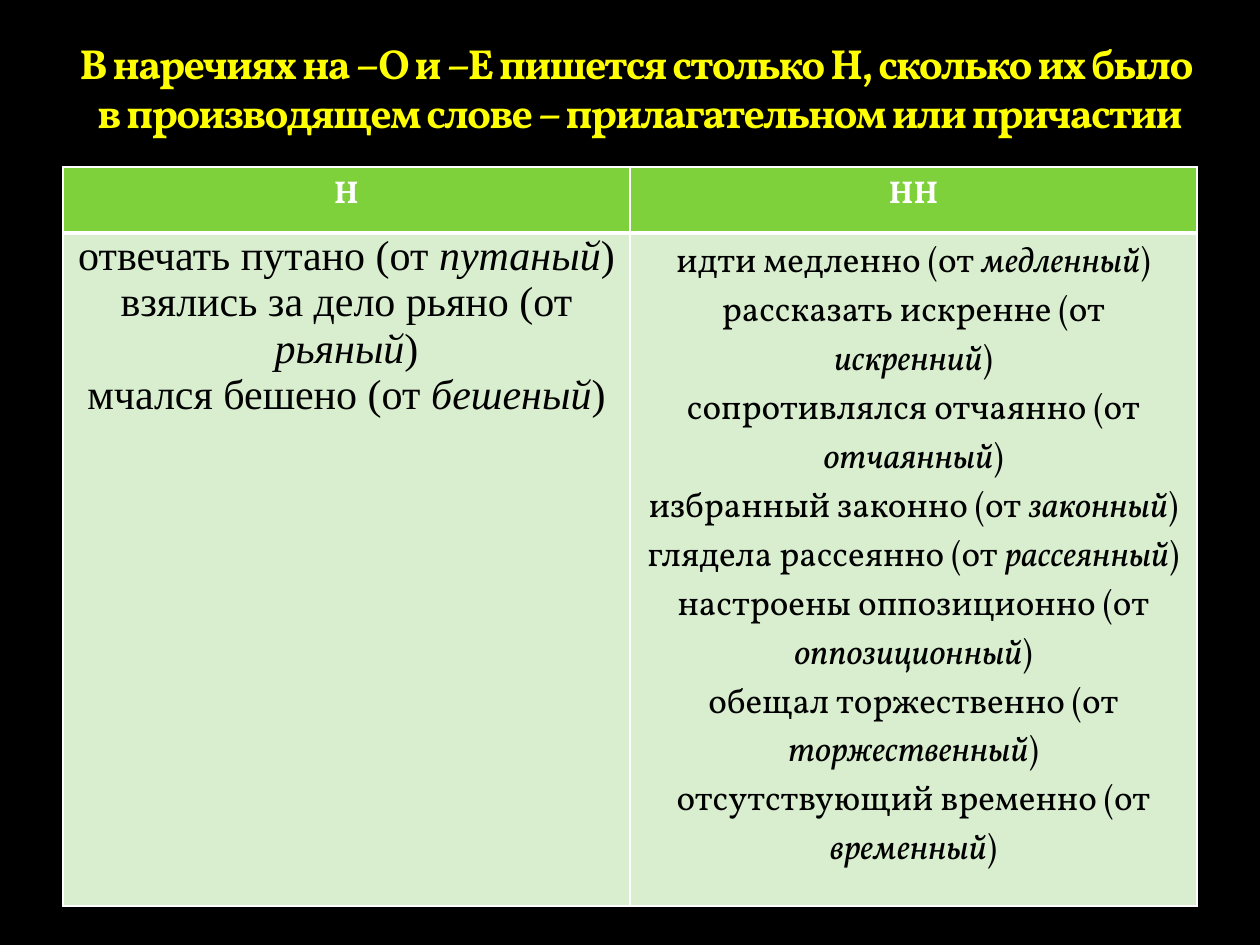
from lxml import etree
from pptx import Presentation
from pptx.dml import color
from pptx.enum import text
from pptx.oxml import ns
from pptx.util import Cm, Pt

TITLE = ("В наречиях на –О и –Е пишется столько Н, сколько их было \v"
         "в производящем слове – прилагательном или причастии")
HEADERS = ["Н", "НН"]
SINGLE_N = [
    ("отвечать путано", "путаный"),
    ("взялись за дело рьяно", "рьяный"),
    ("мчался бешено", "бешеный"),
]
DOUBLE_N = [
    ("идти медленно", "медленный"),
    ("рассказать искренне", "искренний"),
    ("сопротивлялся отчаянно", "отчаянный"),
    ("избранный законно", "законный"),
    ("глядела рассеянно", "рассеянный"),
    ("настроены оппозиционно", "оппозиционный"),
    ("обещал торжественно", "торжественный"),
    ("отсутствующий временно", "временный"),
]


def rgb(value):
    return color.RGBColor.from_string(value)


def format_paragraph(paragraph, font_name, size, font_color, bold=False):
    paragraph.alignment = text.PP_ALIGN.CENTER
    font = paragraph.font
    font.name = font_name
    font.size = Pt(size)
    font.bold = bold
    font.color.rgb = rgb(font_color)


def add_title(slide):
    title = slide.shapes.title
    title.left, title.top, title.width, title.height = Cm(1), Cm(0.8), Cm(23.8), Cm(1.97)
    frame = title.text_frame
    frame.word_wrap = True
    frame.auto_size = text.MSO_AUTO_SIZE.NONE
    frame.vertical_anchor = text.MSO_ANCHOR.BOTTOM
    frame.margin_left = frame.margin_right = frame.margin_top = frame.margin_bottom = 0
    frame.text = TITLE
    paragraph = frame.paragraphs[0]
    paragraph.line_spacing = Pt(28)
    format_paragraph(paragraph, "Vollkorn", 24, "FFFF00", bold=True)
    for run in paragraph.runs:
        run.font._element.set("spc", "-100")


def style_cell(cell, fill, top=1, bottom=1):
    properties = cell._tc.get_or_add_tcPr()
    for side, width in (("L", 1), ("R", 1), ("T", top), ("B", bottom)):
        line = etree.SubElement(properties, ns.qn(f"a:ln{side}"), w=str(Pt(width)))
        solid = etree.SubElement(line, ns.qn("a:solidFill"))
        etree.SubElement(solid, ns.qn("a:srgbClr"), val="FFFFFF")
    cell.fill.solid()
    cell.fill.fore_color.rgb = rgb(fill)


def add_header(cell, label):
    style_cell(cell, "7FD13B", bottom=3)
    cell.text = label
    format_paragraph(cell.text_frame.paragraphs[0], "Vollkorn", 18, "FFFFFF", bold=True)


def add_examples(cell, examples, font_name, size):
    style_cell(cell, "D8EECE", top=3)
    frame = cell.text_frame
    for index, (phrase, source_word) in enumerate(examples):
        paragraph = frame.add_paragraph() if index else frame.paragraphs[0]
        format_paragraph(paragraph, font_name, size, "000000")
        for part in (f"{phrase} (от ", source_word, ")"):
            run = paragraph.add_run()
            run.text = part
            run.font.italic = part == source_word


def add_adverb_table(slide):
    table = slide.shapes.add_table(2, 2, Cm(1.27), Cm(3.37), Cm(22.86), Cm(14.89)).table
    table.rows[0].height = Cm(1.33)
    table.rows[1].height = Cm(13.56)
    for column, label in enumerate(HEADERS):
        add_header(table.cell(0, column), label)
    single_cell, double_cell = table.cell(1, 0), table.cell(1, 1)
    add_examples(single_cell, SINGLE_N, "Times New Roman", 24)
    add_examples(double_cell, DOUBLE_N, "Vollkorn", 20)
    single_cell.margin_left = single_cell.margin_right = Cm(0.18)
    single_cell.margin_top = single_cell.margin_bottom = 0


def main():
    presentation = Presentation()
    presentation.slide_width, presentation.slide_height = Cm(25.4), Cm(19.05)
    slide = presentation.slides.add_slide(presentation.slide_layouts[5])
    slide.background.fill.solid()
    slide.background.fill.fore_color.rgb = rgb("000000")
    add_title(slide)
    add_adverb_table(slide)
    presentation.save("out.pptx")


if __name__ == "__main__":
    main()
